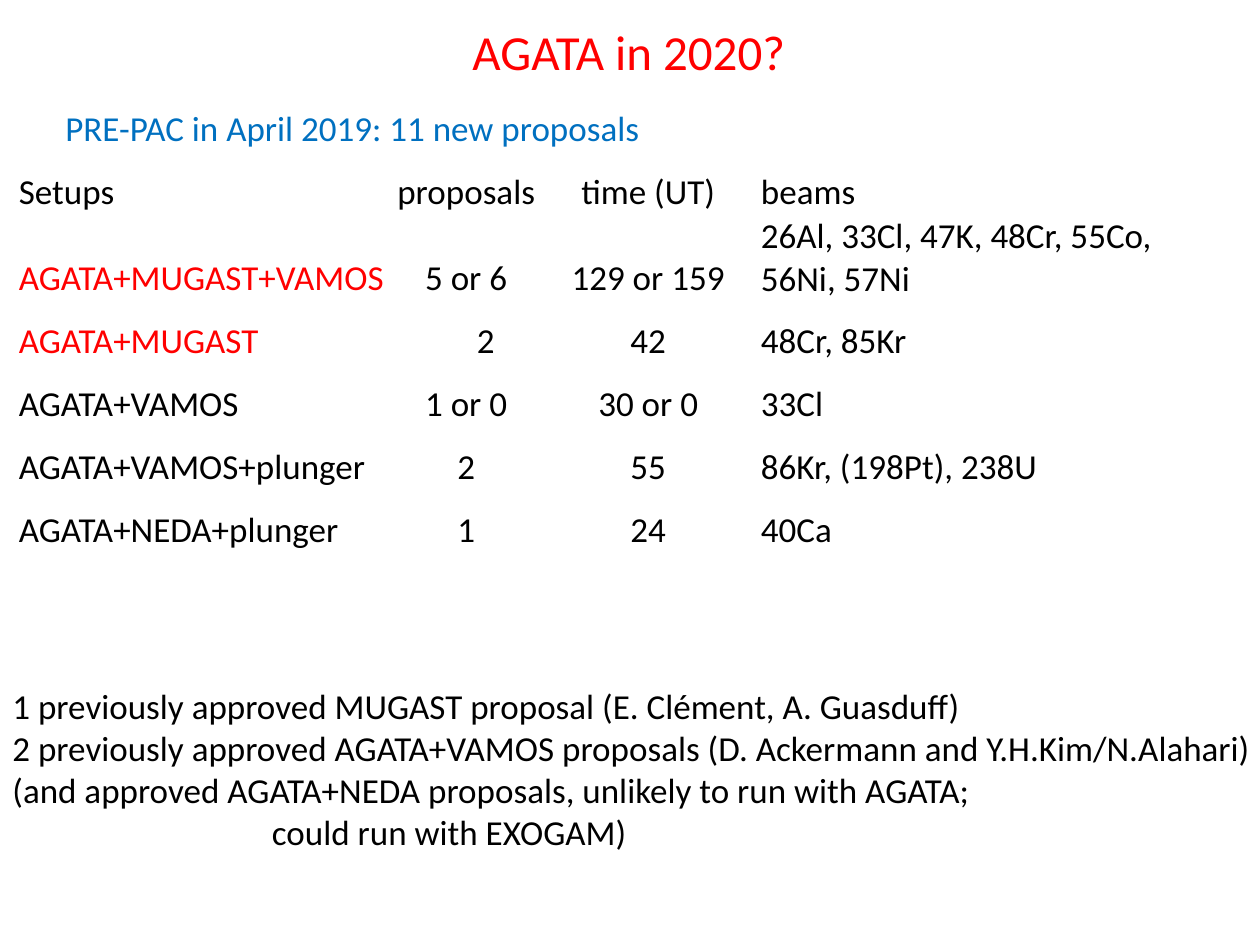
from pptx import Presentation
from pptx import util as u
from pptx.dml.color import RGBColor
from pptx.enum import text

COLORS = {"black": "000000", "red": "FF0000", "blue": "0070C0"}
FONT = "Calibri"
LEFT, CENTER = text.PP_ALIGN.LEFT, text.PP_ALIGN.CENTER

HEADER = ["Setups", "proposals", "time (UT)", "beams"]
SETUPS = [
    ["AGATA+MUGAST+VAMOS", "5 or 6", "129 or 159",
     "26Al, 33Cl, 47K, 48Cr, 55Co, 56Ni, 57Ni"],
    ["AGATA+MUGAST", "2", "42", "48Cr, 85Kr"],
    ["AGATA+VAMOS", "1 or 0", "30 or 0", "33Cl"],
    ["AGATA+VAMOS+plunger", "2", "55", "86Kr, (198Pt), 238U"],
    ["AGATA+NEDA+plunger", "1", "24", "40Ca"],
]
RED_SETUPS = {"AGATA+MUGAST+VAMOS", "AGATA+MUGAST"}
COLUMNS = [3, 1.12, 1.77, 2.37, 1]
ALIGNMENTS = [LEFT, CENTER, CENTER, LEFT]
NOTES = [
    "1 previously approved MUGAST proposal (E. Clément, A. Guasduff)",
    "2 previously approved AGATA+VAMOS proposals (D. Ackermann and Y.H.Kim/N.Alahari)",
    "(and approved AGATA+NEDA proposals, unlikely to run with AGATA;",
    "could run with EXOGAM)",
]


def format_paragraph(p, color="black", size=20, align=LEFT):
    p.alignment = align
    for r in p.runs:
        r.font.name = FONT
        r.font.size = u.Pt(size)
        r.font.color.rgb = RGBColor.from_string(COLORS[color])


def add_title(s, box):
    sp = s.shapes.title
    sp.left, sp.top, sp.width, sp.height = map(u.Inches, box)
    tf = sp.text_frame
    tf.text = "AGATA in 2020?"
    tf.word_wrap = False
    tf.vertical_anchor = text.MSO_ANCHOR.TOP
    format_paragraph(tf.paragraphs[0], "red", 28, CENTER)


def add_text(s, box, lines, color="black", wrap=True):
    tf = s.shapes.add_textbox(*map(u.Inches, box)).text_frame
    tf.text = "\n".join(lines)
    tf.word_wrap = wrap
    for p in tf.paragraphs:
        format_paragraph(p, color)
    return tf


def add_setups(s, left, top, row_height):
    rows = [HEADER] + SETUPS
    table = s.shapes.add_table(
        len(rows), len(COLUMNS), u.Inches(left), u.Inches(top),
        u.Inches(sum(COLUMNS)), u.Inches(row_height * len(rows))).table
    table.first_row = table.horz_banding = False
    for column, width in zip(table.columns, COLUMNS):
        column.width = u.Inches(width)
    for cell in table.iter_cells():
        cell.fill.background()

    for i, row in enumerate(rows):
        color = "red" if row[0] in RED_SETUPS else "black"
        for j, value in enumerate(row):
            cell = table.cell(i, j)
            cell.text = value
            cell.vertical_anchor = text.MSO_ANCHOR.BOTTOM
            cell.margin_left = cell.margin_right = cell.margin_top = u.Inches(0.01)
            cell.margin_bottom = 0
            format_paragraph(cell.text_frame.paragraphs[0],
                             color if j == 0 else "black", align=ALIGNMENTS[j])

    # The long beam list takes the spare column; the second count sits right of centre
    table.cell(1, 3).merge(table.cell(1, 4))
    table.cell(2, 1).margin_left = u.Inches(0.32)


def add_notes(s, box, indent):
    tf = add_text(s, box, NOTES)
    pPr = tf.paragraphs[-1]._p.get_or_add_pPr()
    pPr.set("marL", str(u.Inches(indent)))
    pPr.set("indent", "0")


def main():
    prs = Presentation()
    prs.slide_width, prs.slide_height = u.Inches(10), u.Inches(7.5)
    s = prs.slides.add_slide(prs.slide_layouts[5])
    add_title(s, (3.63, 0.12, 2.72, 0.57))
    add_notes(s, (0, 5.38, 10.12, 2.05), 2.06)
    add_setups(s, 0.14, 1.2, 0.5)
    add_text(s, (0.42, 0.8, 4.8, 0.44),
             ["PRE-PAC in April 2019: 11 new proposals"], "blue", wrap=False)
    prs.save("out.pptx")


if __name__ == "__main__":
    main()
